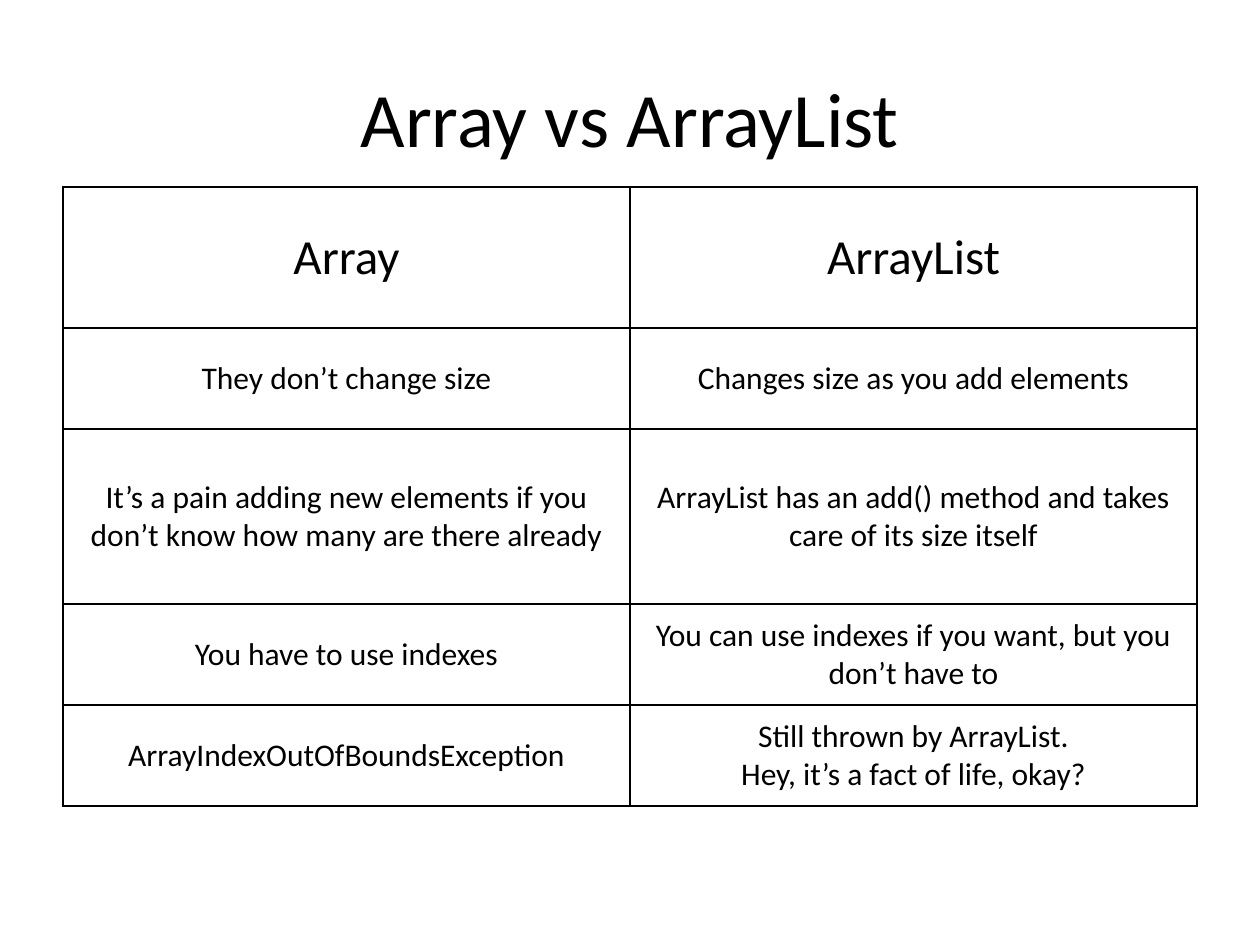
from lxml import etree
from pptx import Presentation
from pptx import util as u
from pptx.dml.color import RGBColor
from pptx.enum import text
from pptx.oxml.ns import qn

ROWS = [
    ("Array", "ArrayList"),
    ("They don’t change size", "Changes size as you add elements"),
    ("It’s a pain adding new elements if you don’t know how many are there already",
     "ArrayList has an add() method and takes care of its size itself"),
    ("You have to use indexes", "You can use indexes if you want, but you don’t have to"),
    ("ArrayIndexOutOfBoundsException",
     "Still thrown by ArrayList.\nHey, it’s a fact of life, okay?"),
]
ROW_HEIGHTS = [141, 101, 175, 101, 101]


def px(length):
    return u.Emu(round(length * 914400 / 126))


def color(value):
    return RGBColor.from_string(value)


class SlideBuilder:
    """Hold the style and the current slide, and add its elements."""

    font = "Calibri"
    ink = "000000"
    border_width = 1

    def __init__(self, presentation):
        self.slide = presentation.slides.add_slide(presentation.slide_layouts[5])

    def set_text(self, frame, content, size):
        frame.text = content
        font_format = {"name": self.font, "size": u.Pt(size), "bold": False}
        for paragraph in frame.paragraphs:
            paragraph.alignment = text.PP_ALIGN.CENTER
            for run in paragraph.runs:
                for name, value in font_format.items():
                    setattr(run.font, name, value)
                run.font.color.rgb = color(self.ink)

    def title(self, content, left, top, width, height, size):
        title = self.slide.shapes.title
        box = {"left": left, "top": top, "width": width, "height": height}
        for name, value in box.items():
            setattr(title, name, px(value))
        title.text_frame.vertical_anchor = text.MSO_ANCHOR.MIDDLE
        self.set_text(title.text_frame, content, size)

    def border(self, cell):
        properties = cell._tc.get_or_add_tcPr()
        for index, side in enumerate(("lnL", "lnR", "lnT", "lnB")):
            line = etree.Element(qn(f"a:{side}"), w=str(u.Pt(self.border_width)))
            fill = etree.SubElement(line, qn("a:solidFill"))
            etree.SubElement(fill, qn("a:srgbClr"), val=self.ink)
            properties.insert(index, line)

    def table(self, rows, left, top, width, heights, header_size, body_size):
        frame = self.slide.shapes.add_table(
            len(rows), len(rows[0]), px(left), px(top), px(width), px(sum(heights)))
        table = frame.table
        table.first_row = table.horz_banding = False
        for row_index, (contents, height) in enumerate(zip(rows, heights)):
            table.rows[row_index].height = px(height)
            for column_index, content in enumerate(contents):
                cell = table.cell(row_index, column_index)
                cell.vertical_anchor = text.MSO_ANCHOR.MIDDLE
                cell.fill.background()
                self.set_text(cell.text_frame, content, body_size if row_index else header_size)
                self.border(cell)


def main():
    presentation = Presentation()
    presentation.slide_width, presentation.slide_height = px(1260), px(945)
    builder = SlideBuilder(presentation)
    builder.title("Array vs ArrayList", 63, 38, 1134, 157, size=44)
    builder.table(ROWS, 63, 187, 1134, ROW_HEIGHTS, header_size=28, body_size=18)
    presentation.save("out.pptx")


if __name__ == "__main__":
    main()
